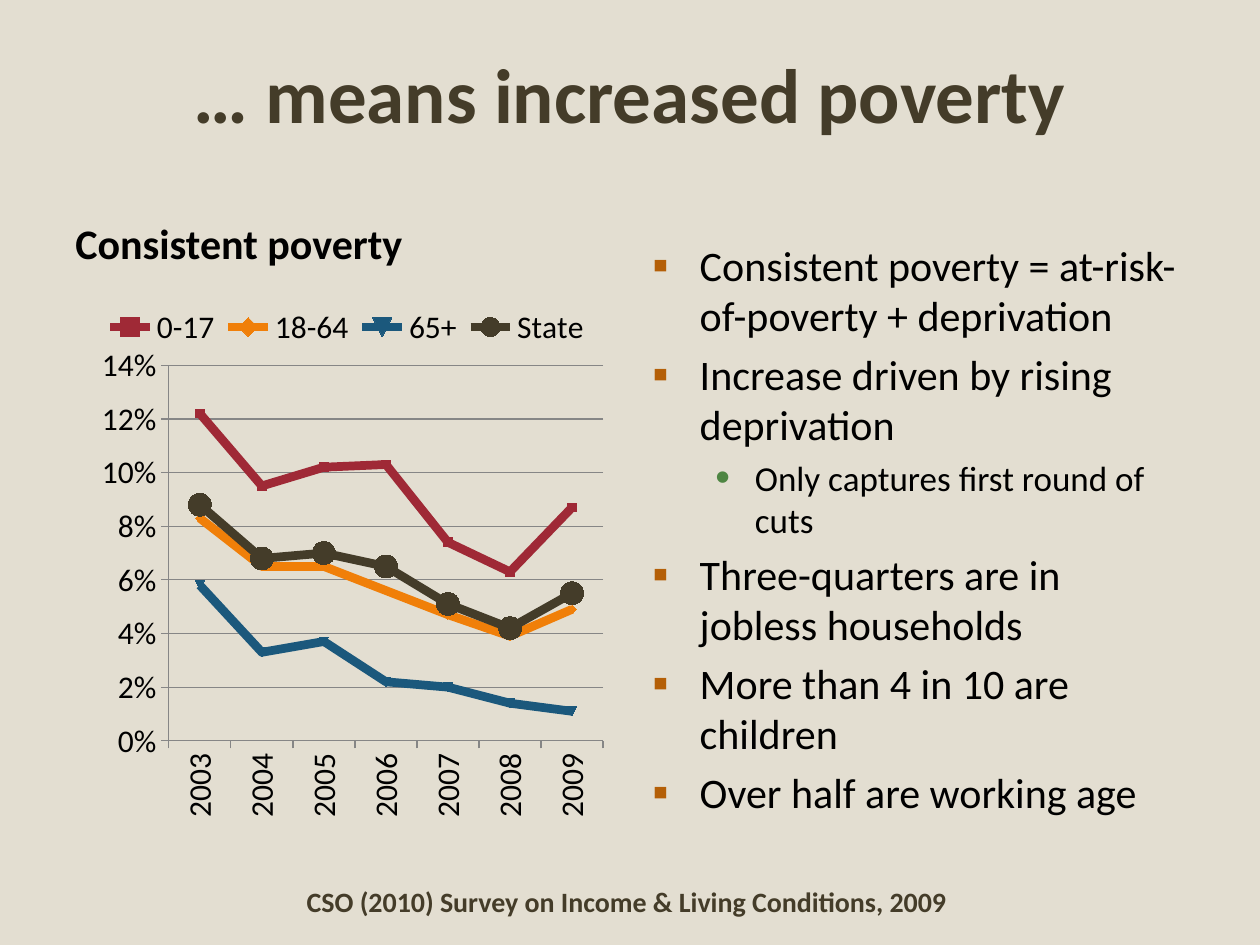
from pptx import Presentation
from pptx.chart.data import CategoryChartData
from pptx.dml.color import RGBColor
from pptx.enum.chart import (XL_CHART_TYPE, XL_LEGEND_POSITION as LegendPos,
                             XL_MARKER_STYLE as Marker, XL_TICK_MARK as Tick)
from pptx.enum.text import MSO_ANCHOR as Anchor, PP_ALIGN as Align
from pptx.oxml import parse_xml
from pptx.oxml.ns import nsdecls
from pptx.util import Pt

FONT = "Calibri"
SAND = RGBColor(0xE3, 0xDE, 0xD1)
BROWN = RGBColor(0x44, 0x3C, 0x29)
BLACK = RGBColor(0, 0, 0)
GREY = RGBColor(0x86, 0x86, 0x86)
RED = RGBColor(0x9F, 0x29, 0x36)
ORANGE = RGBColor(0xF0, 0x7F, 0x09)
BLUE = RGBColor(0x1B, 0x58, 0x7C)
RUST = RGBColor(0xB4, 0x5F, 0x07)
GREEN = RGBColor(0x4E, 0x85, 0x42)

YEARS = range(2003, 2010)
# group, rates, colour, marker style, marker size
POVERTY_RATES = [
    ("0-17", (0.122, 0.095, 0.102, 0.103, 0.074, 0.063, 0.087), RED, Marker.AUTOMATIC, 5),
    ("18-64", (0.083, 0.065, 0.065, 0.056, 0.047, 0.039, 0.049), ORANGE, Marker.AUTOMATIC, 5),
    ("65+", (0.058, 0.033, 0.037, 0.022, 0.02, 0.014, 0.011), BLUE, Marker.AUTOMATIC, 5),
    ("State", (0.088, 0.068, 0.07, 0.065, 0.051, 0.042, 0.055), BROWN, Marker.CIRCLE, 13),
]
FINDINGS = [
    (0, "Consistent poverty = at-risk-of-poverty + deprivation"),
    (0, "Increase driven by rising deprivation"),
    (1, "Only captures first round of cuts"),
    (0, "Three-quarters are in jobless households"),
    (0, "More than 4 in 10 are children"),
    (0, "Over half are working age"),
]
# size, left margin, hanging indent, bullet, bullet colour, bullet percent
LEVELS = [(24, 27, 27, "▪", RUST, 110), (20, 58.5, 22.5, "•", GREEN, 120)]


def place(shape, box):
    shape.left, shape.top, shape.width, shape.height = (Pt(v) for v in box)


def add_run(paragraph, text, size, color=BLACK, bold=False):
    run = paragraph.add_run()
    run.text = text
    run.font.name, run.font.size = FONT, Pt(size)
    run.font.bold, run.font.color.rgb = bold, color


def add_text_frame(slide, box, anchor=Anchor.TOP):
    frame = slide.shapes.add_textbox(*(Pt(v) for v in box)).text_frame
    frame.word_wrap, frame.vertical_anchor = True, anchor
    return frame


def add_title(slide, box):
    title = slide.shapes.title
    place(title, box)
    title.text_frame.vertical_anchor = Anchor.MIDDLE
    paragraph = title.text_frame.paragraphs[0]
    paragraph.alignment = Align.CENTER
    add_run(paragraph, "… means increased poverty", 44, BROWN, True)


def add_bullet(paragraph, char, color, percent, margin, hanging):
    properties = paragraph._p.get_or_add_pPr()
    properties.set("marL", str(Pt(margin)))
    properties.set("indent", str(-Pt(hanging)))
    for content in (f'<a:buClr {nsdecls("a")}><a:srgbClr val="{color}"/></a:buClr>',
                    f'<a:buSzPct {nsdecls("a")} val="{percent * 1000}"/>',
                    f'<a:buFont {nsdecls("a")} typeface="Arial"/>',
                    f'<a:buChar {nsdecls("a")} char="{char}"/>'):
        properties.append(parse_xml(content))


def add_findings(slide, box):
    frame = add_text_frame(slide, box, Anchor.MIDDLE)
    for i, (level, text) in enumerate(FINDINGS):
        size, margin, hanging, char, color, percent = LEVELS[level]
        paragraph = frame.add_paragraph() if i else frame.paragraphs[0]
        paragraph.level = level
        paragraph.space_before = Pt(size * 0.2)
        add_bullet(paragraph, char, color, percent, margin, hanging)
        add_run(paragraph, text, size)


def set_layout(element, index, fractions, target=""):
    """Fix a chart part at x, y, w, h, given in fractions of the chart."""
    for layout in element.findall("{*}layout"):
        element.remove(layout)
    sizes = "".join(f'<c:{tag} val="{value}"/>' for tag, value in zip("xywh", fractions))
    element.insert(index, parse_xml(
        f'<c:layout {nsdecls("c")}><c:manualLayout>{target}'
        f'<c:xMode val="edge"/><c:yMode val="edge"/>{sizes}'
        '</c:manualLayout></c:layout>'))


def format_axes(chart):
    years, rates = chart.category_axis, chart.value_axis
    for axis in (years, rates):
        axis.major_tick_mark, axis.minor_tick_mark = Tick.OUTSIDE, Tick.NONE
        axis.format.line.color.rgb = GREY
        axis.format.line.width = Pt(0.75)
        axis.tick_labels.font.size = Pt(18)
    years.has_major_gridlines = False
    years._element.txPr.bodyPr.set("rot", "-5400000")
    rates.minimum_scale, rates.maximum_scale, rates.major_unit = 0, 0.14, 0.02
    rates.major_gridlines.format.line.color.rgb = GREY
    rates.major_gridlines.format.line.width = Pt(0.75)
    rates.tick_labels.number_format = "0%"
    rates.tick_labels.number_format_is_linked = False


def format_legend(chart):
    chart.has_legend = True
    legend = chart.legend
    legend.position = LegendPos.TOP
    legend.include_in_layout = False
    set_layout(legend._element, 1, (0.06, 0.01, 0.9, 0.08))


def add_poverty_chart(slide, box):
    data = CategoryChartData(number_format="0.0%")
    data.categories = YEARS
    for group, rates, *_ in POVERTY_RATES:
        data.add_series(group, rates)
    chart = slide.shapes.add_chart(
        XL_CHART_TYPE.LINE_MARKERS, *(Pt(v) for v in box), data).chart
    chart.has_title = False
    chart.font.name, chart.font.size = FONT, Pt(18)
    chart.font.color.rgb = BLACK
    plot = chart.plots[0]
    plot.vary_by_categories = False
    for series, (_, _, color, style, size) in zip(plot.series, POVERTY_RATES):
        series.smooth = False
        series.format.line.color.rgb = color
        series.format.line.width = Pt(5)
        marker = series.marker
        marker.style, marker.size = style, size
        marker.format.fill.solid()
        marker.format.fill.fore_color.rgb = color
        marker.format.line.color.rgb = color
    format_axes(chart)
    format_legend(chart)
    set_layout(chart._chartSpace.chart.plotArea, 0, (0.19, 0.12, 0.78, 0.69),
               '<c:layoutTarget val="inner"/>')


def add_chart_panel(slide, box):
    left, top, width, height = box
    heading_height = 50.4
    heading = add_text_frame(slide, (left, top, width, heading_height))
    add_run(heading.paragraphs[0], "Consistent poverty", 24, bold=True)
    add_poverty_chart(slide, (left, top + heading_height, width, height - heading_height))


def add_source(slide, box):
    paragraph = add_text_frame(slide, box, Anchor.MIDDLE).paragraphs[0]
    paragraph.alignment = Align.CENTER
    add_run(paragraph, "CSO (2010) Survey on Income & Living Conditions, 2009 ", 16, BROWN, True)


def main():
    deck = Presentation()
    deck.slide_width, deck.slide_height = Pt(720), Pt(540)
    slide = deck.slides.add_slide(deck.slide_layouts[5])
    slide.background.fill.solid()
    slide.background.fill.fore_color.rgb = SAND

    margin, column, body_top, body_height = 36, 318.25, 121, 361.5
    full_width = 720 - 2 * margin
    add_title(slide, (margin, 21.6, full_width, 62.6))
    add_chart_panel(slide, (margin, body_top, column, body_height))
    add_findings(slide, (720 - margin - column, body_top, column, body_height))
    add_source(slide, (margin, 500.4, full_width, 28.8))
    deck.save("out.pptx")


if __name__ == "__main__":
    main()
